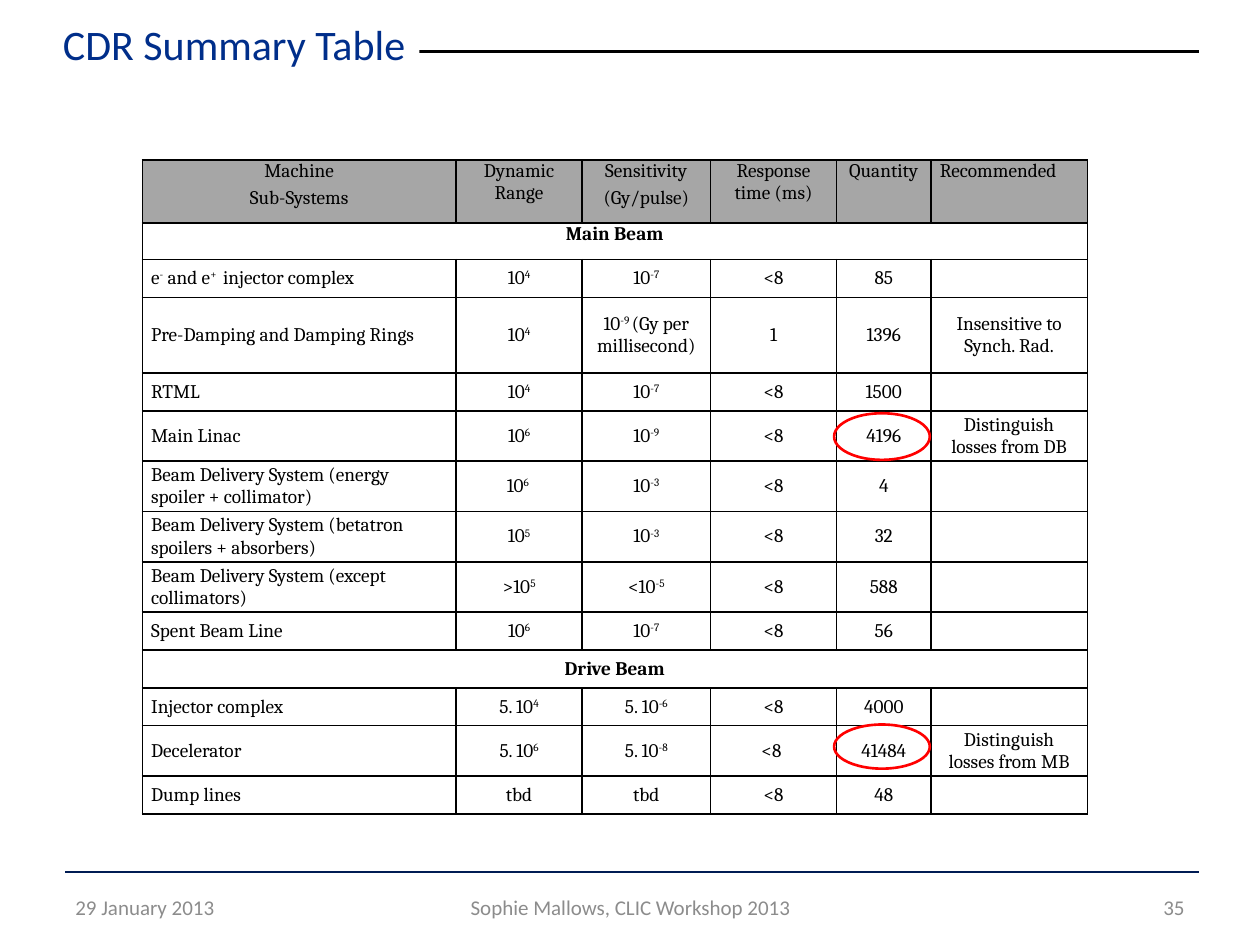
from typing import NamedTuple

from lxml.etree import SubElement
from pptx import Presentation
from pptx.dml.color import RGBColor
from pptx.enum.shapes import MSO_CONNECTOR as Conn, MSO_SHAPE as Shape
from pptx.enum.text import MSO_ANCHOR as Anchor, PP_ALIGN as Align
from pptx.oxml.ns import qn
from pptx.util import Inches, Pt

BLACK = RGBColor(0x00, 0x00, 0x00)
WHITE = RGBColor(0xFF, 0xFF, 0xFF)
NAVY = RGBColor(0x00, 0x1C, 0x54)
BLUE = RGBColor(0x00, 0x2E, 0x8A)
GREY = RGBColor(0x8C, 0x8C, 0x8C)
SILVER = RGBColor(0xA6, 0xA6, 0xA6)
RED = RGBColor(0xFF, 0x00, 0x00)

WIDE, HIGH = Inches(10), Inches(7.5)


class Box(NamedTuple):
    x: float
    y: float
    w: float
    h: float

    def emu(self) -> tuple[int, ...]:
        return across(self.x), down(self.y), across(self.w), down(self.h)


class Rule(NamedTuple):
    y: float
    color: RGBColor


class Label(NamedTuple):
    text: str
    box: Box
    align: Align


RULES = [Rule(5.47, BLACK), Rule(92.27, NAVY)]
FOOT = [
    Label("29 January 2013", Box(5, 93.33, 23.3, 5.33), Align.LEFT),
    Label("Sophie Mallows, CLIC Workshop 2013", Box(34.2, 93.33, 31.7, 5.33), Align.CENTER),
    Label("35", Box(71.7, 93.33, 23.3, 5.33), Align.RIGHT),
]
TITLE = Box(5, 1.33, 28.3, 6.67)
GRID = Box(11.3, 16.93, 75, 69)
RINGS = [Box(66.2, 76.67, 7.6, 4.67), Box(66.2, 43.73, 7.6, 4.93)]
COLS = [24.9, 10, 10.2, 10, 7.5, 12.4]

HEAD = ["Machine\nSub-Systems", "Dynamic Range", "Sensitivity\n(Gy/pulse)",
        "Response time (ms)", "Quantity", "Recommended"]
ROWS = [
    (6.67, HEAD),
    (3.87, ["Main Beam"]),
    (3.87, ["e^-^ and e^+ ^ injector complex", "10^4", "10^-7", "<8", "85", ""]),
    (8, ["Pre-Damping and Damping Rings", "10^4", "10^-9 ^(Gy per millisecond)",
         "1", "1396", "Insensitive to Synch. Rad."]),
    (4, ["RTML", "10^4", "10^-7", "<8", "1500", ""]),
    (5.33, ["Main Linac", "10^6", "10^-9", "<8", "4196", "Distinguish losses from DB"]),
    (5.33, ["Beam Delivery System (energy spoiler + collimator)",
            "10^6 ", "10^-3", "<8", "4", ""]),
    (5.33, ["Beam Delivery System (betatron spoilers + absorbers)",
            "10^5", "10^-3", "<8", "32", ""]),
    (5.33, ["Beam Delivery System (except collimators)",
            ">10^5", "<10^-5", "<8", "588", ""]),
    (4, ["Spent Beam Line", "10^6", "10^-7", "<8", "56", ""]),
    (4, ["Drive Beam"]),
    (4, ["Injector complex", "5. 10^4", "5. 10^-6", "<8", "4000", ""]),
    (5.33, ["Decelerator", "5. 10^6", "5. 10^-8", "<8 ", "41484",
            "Distinguish losses from MB"]),
    (4, ["Dump lines", "tbd", "tbd", "<8", "48", ""]),
]


def across(share: float) -> int:
    return round(WIDE * share / 100)


def down(share: float) -> int:
    return round(HIGH * share / 100)


def add_run(para, text: str, face: str, size: float, color: RGBColor, bold: bool = False):
    run = para.add_run()
    run.text = text
    font = run.font
    font.name, font.size, font.bold = face, Pt(size), bold
    font.color.rgb = color
    return run


def add_rule(slide, rule: Rule) -> None:
    y = down(rule.y)
    line = slide.shapes.add_connector(Conn.STRAIGHT, across(5.2), y, across(95.2), y)
    line.line.color.rgb = rule.color
    line.line.width = Pt(1.5)
    SubElement(line._element.spPr, qn("a:effectLst"))


def add_label(slide, label: Label) -> None:
    frame = slide.shapes.add_textbox(*label.box.emu()).text_frame
    frame.word_wrap = True
    frame.vertical_anchor = Anchor.MIDDLE
    para = frame.paragraphs[0]
    para.alignment = label.align
    add_run(para, label.text, "Calibri", 12, GREY)


def add_title(slide, text: str) -> None:
    box = slide.shapes.add_textbox(*TITLE.emu())
    box.fill.solid()
    box.fill.fore_color.rgb = WHITE
    frame = box.text_frame
    frame.word_wrap = False
    frame.margin_left = 0
    frame.vertical_anchor = Anchor.MIDDLE
    para = frame.paragraphs[0]
    para.alignment = Align.LEFT
    add_run(para, text, "Calibri", 24, BLUE)


def add_ring(slide, box: Box) -> None:
    ring = slide.shapes.add_shape(Shape.OVAL, *box.emu())
    ring.shadow.inherit = False
    ring.fill.background()
    ring.line.color.rgb = RED
    ring.line.width = Pt(1.5)


def set_edges(cell) -> None:
    props = cell._tc.get_or_add_tcPr()
    for spot, side in enumerate(("lnL", "lnR", "lnT", "lnB")):
        edge = props.makeelement(qn(f"a:{side}"), {"w": str(Pt(1))})
        fill = SubElement(edge, qn("a:solidFill"))
        SubElement(fill, qn("a:srgbClr"), val=str(BLACK))
        props.insert(spot, edge)


def fill_cell(cell, text: str, align: Align, bold: bool) -> None:
    frame = cell.text_frame
    for spot, line in enumerate(text.split("\n")):
        para = frame.add_paragraph() if spot else frame.paragraphs[0]
        para.alignment = align
        if spot:
            para.space_before = Pt(3)
        for part, words in enumerate(line.split("^")):
            run = add_run(para, words, "Cambria", 11, BLACK, bold)
            if part % 2:
                run.font._element.set("baseline", "30000")


def pick_align(row: int, col: int, band: bool) -> Align:
    if row == 0 and col == len(COLS) - 1:
        return Align.JUSTIFY
    return Align.LEFT if row and col == 0 and not band else Align.CENTER


def add_grid(slide) -> None:
    table = slide.shapes.add_table(len(ROWS), len(COLS), *GRID.emu()).table
    table.first_row = table.horz_banding = False
    for col, share in zip(table.columns, COLS):
        col.width = across(share)
    for r, (share, texts) in enumerate(ROWS):
        table.rows[r].height = down(share)
        band = len(texts) == 1
        for c in range(len(COLS)):
            cell = table.cell(r, c)
            cell.margin_left = cell.margin_right = Inches(0.07)
            cell.margin_top = cell.margin_bottom = 0
            cell.vertical_anchor = Anchor.TOP if r < 2 else Anchor.MIDDLE
            cell.fill.solid()
            cell.fill.fore_color.rgb = WHITE if r else SILVER
            set_edges(cell)
        if band:
            table.cell(r, 0).merge(table.cell(r, len(COLS) - 1))
        for c, text in enumerate(texts):
            fill_cell(table.cell(r, c), text, pick_align(r, c, band), band)


def main() -> None:
    deck = Presentation()
    deck.slide_width, deck.slide_height = WIDE, HIGH
    slide = deck.slides.add_slide(deck.slide_layouts[6])
    for rule in RULES:
        add_rule(slide, rule)
    for label in FOOT:
        add_label(slide, label)
    add_title(slide, "CDR Summary Table")
    add_grid(slide)
    for ring in RINGS:
        add_ring(slide, ring)
    deck.save("out.pptx")


if __name__ == "__main__":
    main()
